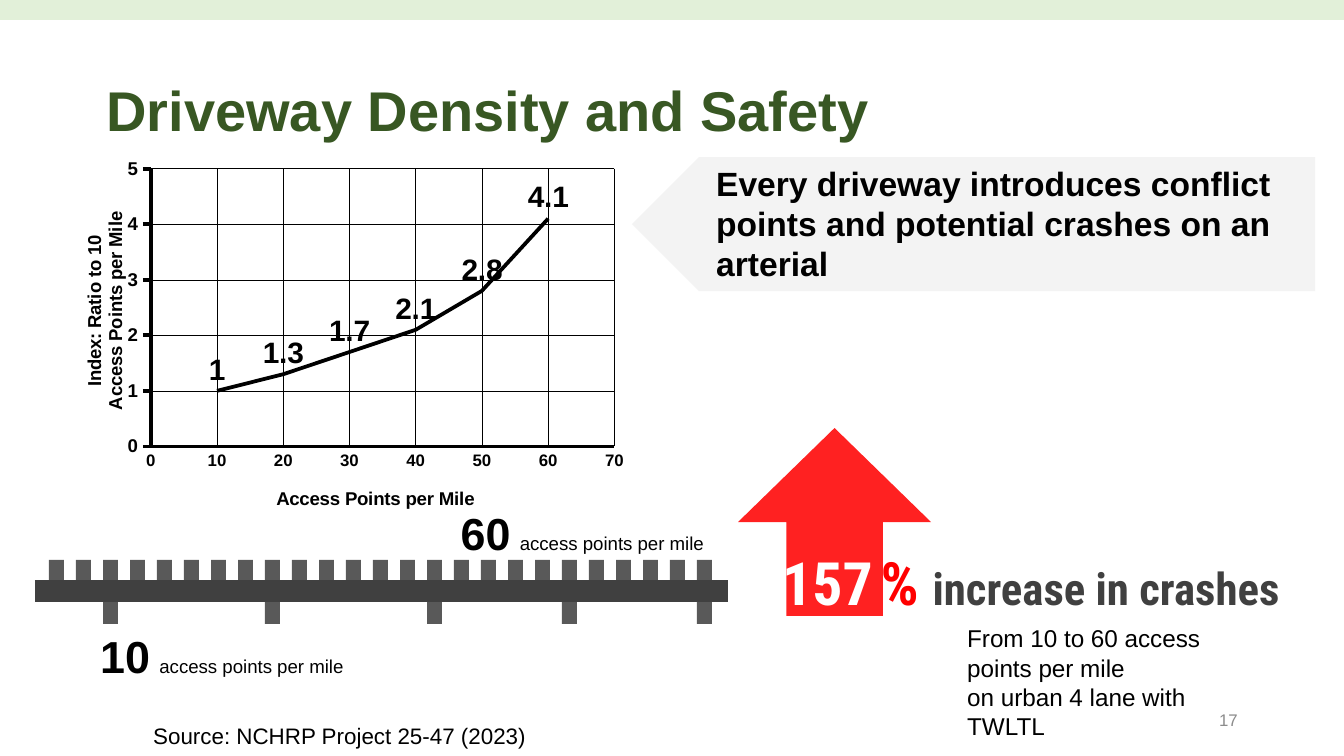
from lxml import etree
from pptx import Presentation
from pptx import util as u
from pptx.chart.data import CategoryChartData
from pptx.dml.color import RGBColor
from pptx.enum import chart as ch, shapes, text
from pptx.oxml import parse_xml
from pptx.oxml.ns import nsdecls, qn

PX = 914400 / 134.4
COLORS = {
    "black": "000000", "white": "FFFFFF", "title": "385723", "band": "E2F0D9",
    "callout": "F2F2F2", "red": "FF0000", "road": "404040", "driveway": "595959",
    "number": "8C8C8C",
}


def px(n):
    return u.Emu(round(n * PX))


def rgb(name):
    return RGBColor.from_string(COLORS[name])


class SlideBuilder:
    font = "Arial"

    def __init__(self, prs):
        self.s = prs.slides.add_slide(prs.slide_layouts[5])

    def style(self, font, size, color="black", bold=False, name=None):
        font.name = name or self.font
        font.size = u.Pt(size)
        font.bold = bold
        font.color.rgb = rgb(color)

    def title(self, box, words):
        sp = self.s.shapes.title
        sp.left, sp.top, sp.width, sp.height = map(px, box)
        tf = sp.text_frame
        tf.text = words
        tf.vertical_anchor = text.MSO_ANCHOR.MIDDLE
        p = tf.paragraphs[0]
        p.alignment = text.PP_ALIGN.LEFT
        p.line_spacing = 0.9
        self.style(p.runs[0].font, 30, "title", True)

    def text_box(self, box, *paragraphs, align=text.PP_ALIGN.LEFT,
                 anchor=text.MSO_ANCHOR.TOP, name=None):
        tf = self.s.shapes.add_textbox(*map(px, box)).text_frame
        tf.word_wrap = True
        tf.vertical_anchor = anchor
        for i, runs in enumerate(paragraphs):
            p = tf.add_paragraph() if i else tf.paragraphs[0]
            p.alignment = align
            for words, size, color, bold in runs:
                r = p.add_run()
                r.text = words
                self.style(r.font, size, color, bold, name)

    def density(self, box, count, align=text.PP_ALIGN.LEFT):
        self.text_box(box, [(count, 24, "black", True), (" ", 18, "black", False),
                            ("access points per mile", 10, "black", False)], align=align)

    def shape(self, kind, box, color, rotation=0, alpha=None, parent=None):
        sp = (parent or self.s).shapes.add_shape(kind, *map(px, box))
        sp.shadow.inherit = False
        sp.fill.solid()
        sp.fill.fore_color.rgb = rgb(color)
        sp.line.fill.background()
        sp.rotation = rotation
        if alpha:
            clr = sp._element.spPr.find(qn("a:solidFill")).find(qn("a:srgbClr"))
            etree.SubElement(clr, qn("a:alpha")).set("val", str(alpha * 1000))

    def line(self, start, end, color, width, parent):
        cn = parent.shapes.add_connector(
            shapes.MSO_CONNECTOR.STRAIGHT, *map(px, start + end))
        cn.line.color.rgb = rgb(color)
        cn.line.width = u.Pt(width)
        etree.SubElement(cn._element.spPr, qn("a:effectLst"))

    def layout(self, owner, x, y, w=None, h=None):
        parts = [("layoutTarget", "inner")] if w else []
        parts += [("xMode", "edge"), ("yMode", "edge"), ("x", x), ("y", y)]
        if w:
            parts += [("w", w), ("h", h)]
        items = "".join(f'<c:{tag} val="{val}"/>' for tag, val in parts)
        for old in owner.findall(qn("c:layout")):
            owner.remove(old)
        node = parse_xml(f'<c:layout {nsdecls("c")}><c:manualLayout>{items}'
                         '</c:manualLayout></c:layout>')
        tx = owner.find(qn("c:tx"))
        if tx is None:
            owner.insert(0, node)
        else:
            tx.addnext(node)

    def axis(self, axis, size, tick, lines, x, y):
        self.style(axis.tick_labels.font, size, bold=True)
        axis.major_tick_mark = tick
        axis.minor_tick_mark = ch.XL_TICK_MARK.NONE
        axis.has_major_gridlines = True
        for line, width in ((axis.format.line, 2), (axis.major_gridlines.format.line, 0.25)):
            line.color.rgb = rgb("black")
            line.width = u.Pt(width)
        tf = axis.axis_title.text_frame
        tf.text = "\n".join(lines)
        for p in tf.paragraphs:
            self.style(p.runs[0].font, 10, bold=True)
        self.layout(axis.axis_title._element, x, y)

    def chart(self, box, cats, vals):
        data = CategoryChartData()
        data.categories = cats
        data.add_series("Series 1", vals)
        chart = self.s.shapes.add_chart(ch.XL_CHART_TYPE.LINE, *map(px, box), data).chart
        chart.has_legend = False
        chart.has_title = False
        self.style(chart.font, 9.2, bold=True)
        val = chart.value_axis
        val.minimum_scale, val.maximum_scale, val.major_unit = 0, 5, 1
        for old in val._element.findall(qn("c:crossBetween")):
            val._element.remove(old)
        val._element.find(qn("c:crosses")).addnext(
            parse_xml(f'<c:crossBetween {nsdecls("c")} val="midCat"/>'))
        self.axis(chart.category_axis, 9, ch.XL_TICK_MARK.NONE,
                  ["Access Points per Mile"], 0.39, 0.94)
        self.axis(val, 10, ch.XL_TICK_MARK.OUTSIDE,
                  ["Index: Ratio to 10", "Access Points per Mile"], 0.07, 0.34)
        plot = chart.plots[0]
        plot.vary_by_categories = False
        series = plot.series[0]
        series.smooth = False
        series.marker.style = ch.XL_MARKER_STYLE.NONE
        series.format.line.color.rgb = rgb("black")
        series.format.line.width = u.Pt(2)
        labels = series.data_labels
        labels.show_value = True
        labels.position = ch.XL_LABEL_POSITION.ABOVE
        self.style(labels.font, 16, bold=True)
        area = chart._chartSpace.chart.plotArea
        self.layout(area, 0.19, 0.25, 0.76, 0.61)

    def road(self):
        group = self.s.shapes.add_group_shape()
        rows = [(560, range(25)), (598, (2, 8, 14, 19, 24))]
        for top, slots in rows:
            for i in slots:
                self.shape(shapes.MSO_SHAPE.RECTANGLE, (49 + 27 * i, top, 15, 26),
                           "driveway", parent=group)
        self.line((35, 591), (728, 591), "road", 12, group)


def main():
    prs = Presentation()
    prs.slide_width, prs.slide_height = px(1344), px(756)
    b = SlideBuilder(prs)
    b.shape(shapes.MSO_SHAPE.RECTANGLE, (0, 0, 1344, 20), "band")
    b.title((93, 40, 1159, 146), "Driveway Density and Safety")
    b.text_box((949, 700, 302, 40), [("17", 9, "number", False)],
               align=text.PP_ALIGN.RIGHT, anchor=text.MSO_ANCHOR.MIDDLE)
    b.chart((35, 55, 610, 460), [str(n) for n in range(0, 80, 10)],
            [None, 1, 1.3, 1.7, 2.1, 2.8, 4.1, None])
    b.density((87, 622, 344, 67), "10")
    b.shape(shapes.MSO_SHAPE.PENTAGON, (632, 157, 683, 134), "callout", 180, 90)
    b.text_box((703, 156, 656, 136),
               [("Every driveway introduces conflict points and potential crashes on an arterial",
                 18, "black", True)])
    b.density((425, 499, 292, 67), "60", text.PP_ALIGN.RIGHT)
    b.shape(shapes.MSO_SHAPE.DOWN_ARROW, (738, 428, 193, 188), "red", 180, 87)
    b.text_box((769, 539, 540, 86),
               [("157", 32, "white", True), (" ", 18, "white", True),
                ("% ", 32, "red", True), ("increase in crashes", 24, "road", True)],
               name="Roboto Condensed")
    b.text_box((954, 617, 302, 132),
               [("From 10 to 60 access points per mile", 13, "black", False)],
               [("on urban 4 lane with TWLTL", 13, "black", False)])
    b.road()
    b.text_box((140, 716, 679, 40),
               [("Source: NCHRP Project 25-47 (2023)", 12, "black", False)])
    prs.save("out.pptx")


if __name__ == "__main__":
    main()
